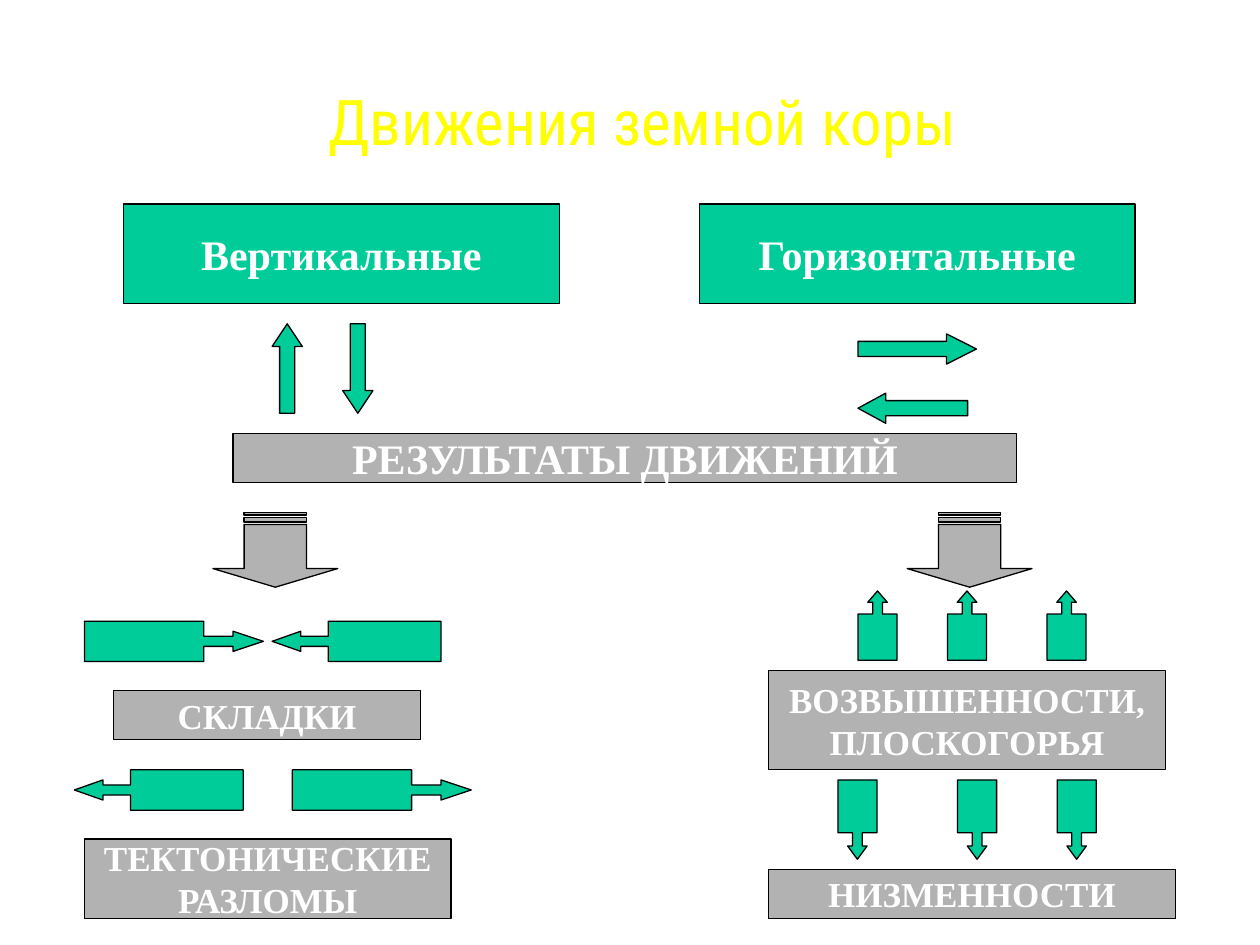
import pptx
import pptx.util
import pptx.dml.color
import pptx.enum.shapes
import pptx.enum.text

Inches = pptx.util.Inches
Shape = pptx.enum.shapes.MSO_SHAPE
GREEN = "00CC99"
GRAY = "B2B2B2"


def color(value):
    return pptx.dml.color.RGBColor.from_string(value)


class Diagram:
    label_format = {"name": "Times New Roman", "bold": True}
    title_format = {"name": "Roboto Condensed", "size": pptx.util.Pt(36), "bold": False}

    def __init__(self, deck):
        self.page = deck.slides.add_slide(deck.slide_layouts[5])

    def fill_text(self, shape, lines, values, text_color):
        frame = shape.text_frame
        frame.word_wrap = False
        frame.vertical_anchor = pptx.enum.text.MSO_ANCHOR.MIDDLE
        for index, line in enumerate(lines):
            para = frame.add_paragraph() if index else frame.paragraphs[0]
            para.alignment = pptx.enum.text.PP_ALIGN.CENTER
            span = para.add_run()
            span.text = line
            for name, value in values.items():
                setattr(span.font, name, value)
            span.font.color.rgb = color(text_color)

    def title(self, text, left, top, width, height):
        box = self.page.shapes.title
        place = {"left": left, "top": top, "width": width, "height": height}
        for name, value in place.items():
            setattr(box, name, Inches(value))
        self.fill_text(box, [text], self.title_format, "FFFF00")

    def shape(self, kind, left, top, width, height, fill, adjustments=()):
        shape = self.page.shapes.add_shape(
            kind, Inches(left), Inches(top), Inches(width), Inches(height))
        shape.shadow.inherit = False
        shape.fill.solid()
        shape.fill.fore_color.rgb = color(fill)
        shape.line.color.rgb = color("000000")
        shape.line.width = pptx.util.Pt(0.75)
        for index, value in enumerate(adjustments):
            shape.adjustments[index] = value
        return shape

    def label(self, lines, left, top, width, height, fill, size):
        box = self.shape(Shape.RECTANGLE, left, top, width, height, fill)
        self.fill_text(box, lines, {**self.label_format, "size": pptx.util.Pt(size)}, "FFFFFF")

    def arrow(self, kind, left, top, width, height, head):
        self.shape(kind, left, top, width, height, GREEN, (0.5, head))

    def callout(self, kind, left, top, width, height, head):
        self.shape(kind, left, top, width, height, GREEN, (0.25, 0.25, head, 0.667))

    def striped_arrow(self, left):
        arrow = self.shape(Shape.STRIPED_RIGHT_ARROW, left, 3.87, 0.59, 0.99, GRAY, (0.5, 0.25))
        arrow.rotation = 90


def main():
    deck = pptx.Presentation()
    deck.slide_width = Inches(10)
    deck.slide_height = Inches(7.5)
    diagram = Diagram(deck)

    diagram.title("Движения земной коры", 2.32, 0.6, 5.56, 0.71)
    for text, left in (("Вертикальные", 0.98), ("Горизонтальные", 5.55)):
        diagram.label([text], left, 1.62, 3.46, 0.79, GREEN, 24)

    diagram.arrow(Shape.UP_ARROW, 2.16, 2.57, 0.24, 0.71, 0.75)
    diagram.arrow(Shape.DOWN_ARROW, 2.72, 2.57, 0.24, 0.71, 0.75)
    diagram.arrow(Shape.RIGHT_ARROW, 6.81, 2.65, 0.94, 0.24, 0.99)
    diagram.arrow(Shape.LEFT_ARROW, 6.81, 3.12, 0.87, 0.24, 0.92)

    diagram.label(["РЕЗУЛЬТАТЫ ДВИЖЕНИЙ"], 1.85, 3.44, 6.22, 0.39, GRAY, 24)
    for left in (1.89, 7.4):
        diagram.striped_arrow(left)

    for right_left, left_left, top in ((0.67, 2.16, 4.93), (2.32, 0.59, 6.11)):
        diagram.callout(Shape.RIGHT_ARROW_CALLOUT, right_left, top, 1.42, 0.32, 0.75)
        diagram.callout(Shape.LEFT_ARROW_CALLOUT, left_left, top, 1.34, 0.32, 0.71)
    for left in (6.81, 7.52, 8.31):
        diagram.callout(Shape.UP_ARROW_CALLOUT, left, 4.69, 0.31, 0.55, 0.29)
    for left in (6.65, 7.6, 8.39):
        diagram.callout(Shape.DOWN_ARROW_CALLOUT, left, 6.19, 0.31, 0.63, 0.34)

    results = (
        (["СКЛАДКИ"], 0.9, 5.48, 2.44, 0.39),
        (["ТЕКТОНИЧЕСКИЕ", "РАЗЛОМЫ"], 0.67, 6.66, 2.91, 0.63),
        (["ВОЗВЫШЕННОСТИ,", "ПЛОСКОГОРЬЯ"], 6.1, 5.32, 3.15, 0.79),
        (["НИЗМЕННОСТИ"], 6.1, 6.9, 3.23, 0.39),
    )
    for lines, left, top, width, height in results:
        diagram.label(lines, left, top, width, height, GRAY, 20)

    deck.save("out.pptx")


if __name__ == "__main__":
    main()
